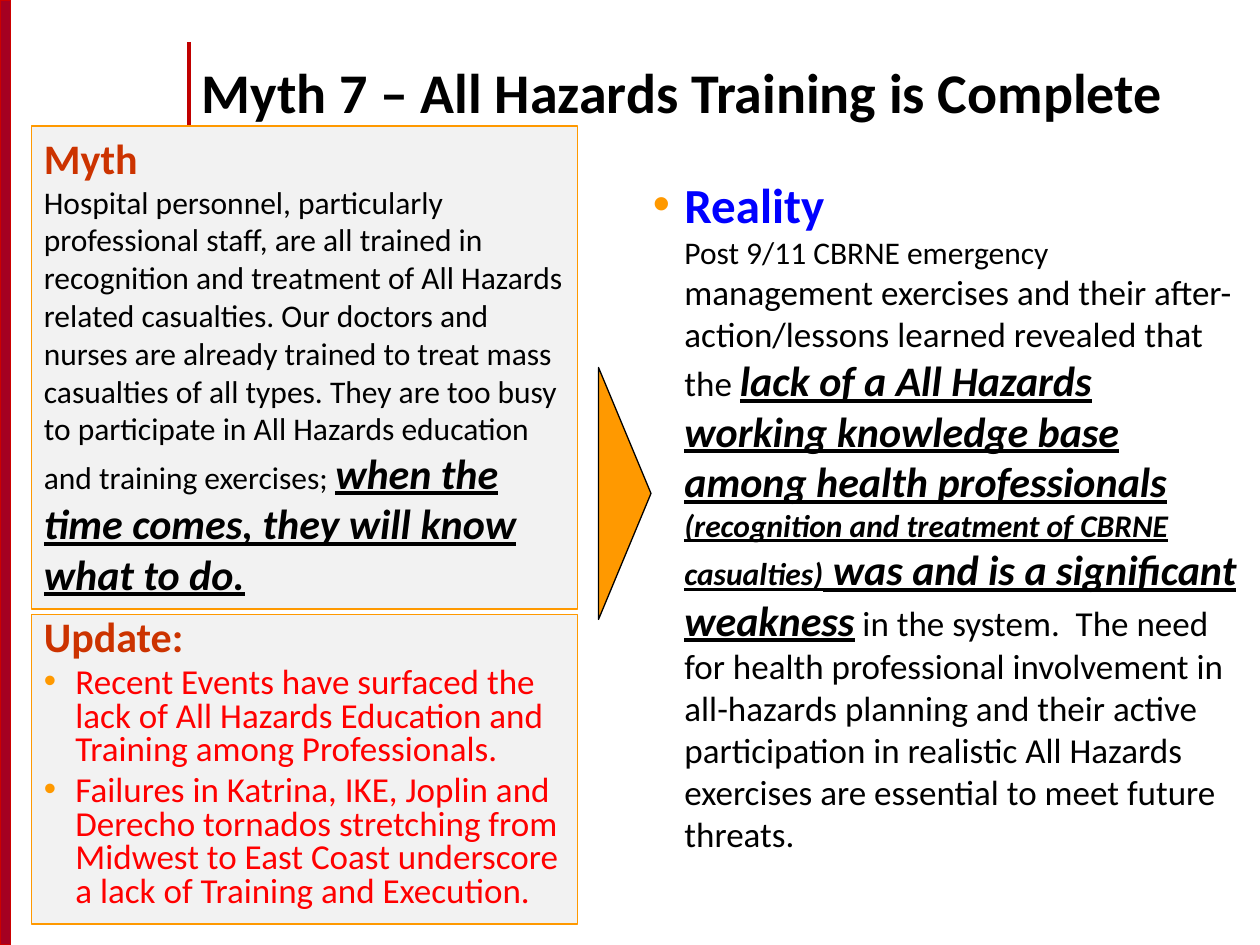
from lxml.etree import SubElement
from pptx import Presentation
from pptx.dml.color import RGBColor
from pptx.enum.shapes import MSO_CONNECTOR as Connector, MSO_SHAPE as Shape
from pptx.enum.text import MSO_ANCHOR as Anchor, PP_ALIGN as Align
from pptx.oxml.ns import qn
from pptx.util import Inches, Pt

deck = Presentation()
deck.slide_width, deck.slide_height = Inches(10), Inches(7.5)
page = deck.slides.add_slide(deck.slide_layouts[6])
UNIT = deck.slide_width / 120
rgb = RGBColor.from_string


def place(kind, area, fill=None, line=None, width=0.75):
    left, top, wide, high = (round(UNIT * cells) for cells in area)
    if kind is None:
        return page.shapes.add_textbox(left, top, wide, high)
    shape = page.shapes.add_shape(kind, left, top, wide, high)
    shape.shadow.inherit = False
    shape.fill.solid()
    shape.fill.fore_color.rgb = rgb(fill)
    shape.line.color.rgb = rgb(line)
    shape.line.width = Pt(width)
    return shape


def write(box, paragraphs, anchor=Anchor.TOP):
    frame = box.text_frame
    frame.word_wrap = True
    frame.vertical_anchor = anchor
    for index, (layout, bullet, spans) in enumerate(paragraphs):
        para = frame.add_paragraph() if index else frame.paragraphs[0]
        para.alignment = Align.LEFT
        for name, value in layout.items():
            setattr(para, name, value)
        if bullet:
            marks = para._p.get_or_add_pPr()
            marks.set("marL", str(Inches(0.25)))
            marks.set("indent", str(-Inches(0.25)))
            SubElement(SubElement(marks, qn("a:buClr")), qn("a:srgbClr"), val="FF9900")
            SubElement(marks, qn("a:buFont"), typeface="Arial")
            SubElement(marks, qn("a:buChar"), char="•")
        for text, size, color, style in spans:
            span = para.add_run()
            span.text = text.rstrip("\n")
            span.font.color.rgb = rgb(color)
            for name, value in {"name": "Calibri", "size": Pt(size), **style}.items():
                setattr(span.font, name, value)
            if text.endswith("\n"):
                para.add_line_break()


BLACK, RUST, RED, BLUE = "000000", "CC3300", "FF0000", "0000FF"
PLAIN = {"bold": False}
BOLD = {"bold": True}
STRESS = {"bold": True, "italic": True, "underline": True}
TIGHT = {"line_spacing": 0.8}
ITEM = {"line_spacing": 0.8, "space_before": Pt(4)}

place(Shape.RECTANGLE, (0, 0, 1, 90), "A50021", "CC0000", 1)

rule = page.shapes.add_connector(
    Connector.STRAIGHT, *(round(UNIT * cells) for cells in (18, 4, 18, 14)))
rule.line.color.rgb = rgb("C00000")
rule.line.width = Pt(2.25)
SubElement(rule._element.spPr, qn("a:effectLst"))

write(place(None, (18, 3, 99, 12.4)), [
    ({"line_spacing": 0.85}, False,
     [("Myth 7 – All Hazards Training is Complete", 32, BLACK, BOLD)]),
], Anchor.MIDDLE)

write(place(Shape.RECTANGLE, (3, 12, 52, 46), "F2F2F2", "FF9900"), [
    ({}, False, [
        ("Myth\n", 24, RUST, BOLD),
        ("Hospital personnel, particularly professional staff, are all trained in "
         "recognition and treatment of All Hazards related casualties. Our doctors "
         "and nurses are already trained to treat mass casualties of all types. They "
         "are too busy to participate in All Hazards education and training "
         "exercises; ", 18, BLACK, PLAIN),
        ("when the time comes, they will know what to do.", 24, BLACK, STRESS),
    ]),
])

write(place(None, (61, 16, 58, 48)), [
    ({}, True, [
        ("Reality\n", 28, BLUE, BOLD),
        ("Post 9/11 CBRNE emergency ", 18, BLACK, PLAIN),
        ("management exercises and their after-action/lessons learned revealed "
         "that the ", 20, BLACK, PLAIN),
        ("lack of a All Hazards working knowledge base among health professionals ",
         24, BLACK, STRESS),
        ("(recognition and treatment of CBRNE casualties)", 18, BLACK, STRESS),
        (" was and is a significant weakness", 24, BLACK, STRESS),
        (" in the system.  The need for health professional involvement in "
         "all-hazards planning and their active participation in realistic All "
         "Hazards exercises are essential to meet future threats.", 20, BLACK, PLAIN),
    ]),
])

arrow = place(Shape.ISOSCELES_TRIANGLE, (47.5, 44.5, 24, 5), "FF9900", BLACK)
arrow.rotation = 90

write(place(Shape.RECTANGLE, (3, 58.5, 52, 29.5), "F2F2F2", "FF9900"), [
    (TIGHT, False, [("Update:", 24, RUST, BOLD)]),
    (ITEM, True, [
        ("Recent Events have surfaced the lack of All Hazards Education and "
         "Training among Professionals.", 20, RED, PLAIN)]),
    (ITEM, True, [
        ("Failures in Katrina, IKE, Joplin and Derecho tornados stretching from "
         "Midwest to East Coast underscore a lack of Training and Execution.",
         20, RED, PLAIN)]),
])

deck.save("out.pptx")
